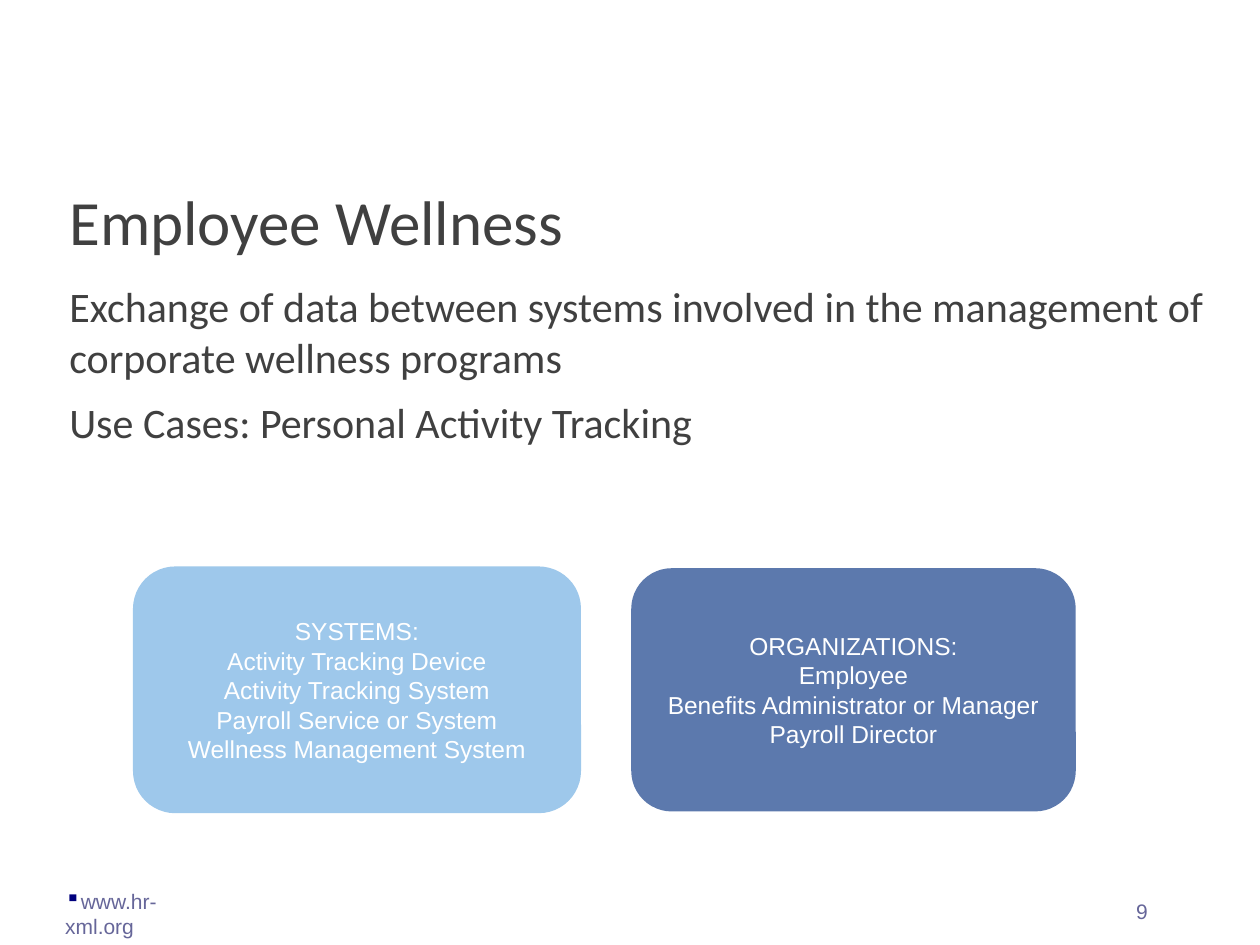
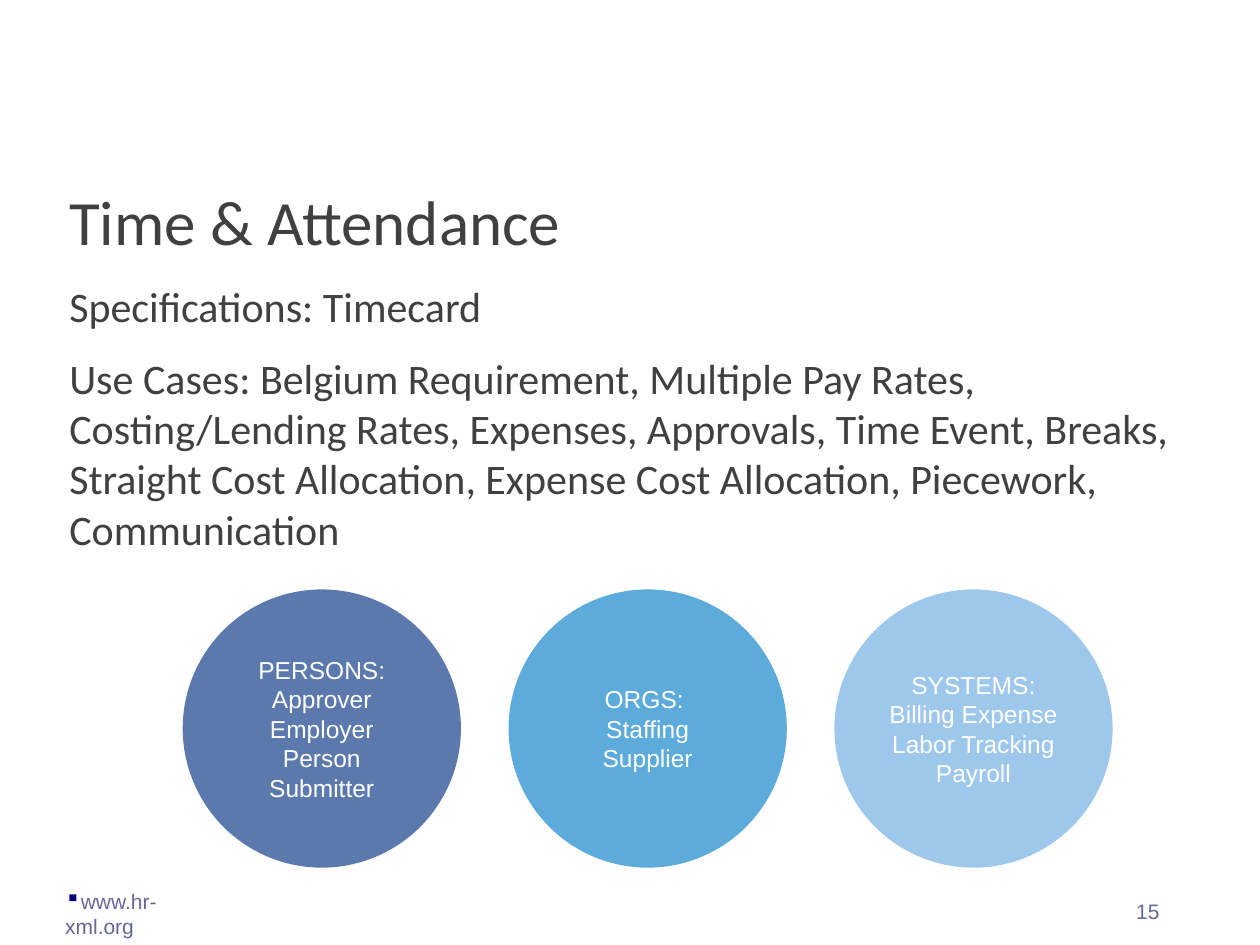
from dataclasses import dataclass

from lxml.etree import SubElement
from pptx import Presentation
from pptx.dml.color import RGBColor as Rgb
from pptx.enum.shapes import MSO_SHAPE as Shape
from pptx.enum.text import MSO_ANCHOR as Anchor, MSO_AUTO_SIZE as Fit, PP_ALIGN as Align
from pptx.oxml.ns import qn
from pptx.util import Pt


@dataclass(frozen=True)
class Theme:
    ink: str = "404040"
    note: str = "666699"
    mark: str = "00007D"
    white: str = "FFFFFF"
    sky: str = "9EC8EB"
    blue: str = "5CABDA"
    slate: str = "5C79AD"
    head: str = "Calibri"
    text: str = "Arial"
    title: int = 36
    body: int = 24
    label: int = 14
    foot: int = 12


T = Theme()
SITE = "www.hr-xml.org"

SLIDES = [
    {
        "title": "Employee Wellness",
        "body": [
            "Exchange of data between systems involved in the management of "
            "corporate wellness programs",
            "Use Cases: Personal Activity Tracking",
        ],
        "page": "9",
        "width": 678,
        "gap": 8.6,
        "row": {"kind": Shape.ROUNDED_RECTANGLE, "left": 77, "top": 324.7,
                "step": 283.7, "size": (254, 139)},
        "parts": [
            (T.sky, T.sky, ["SYSTEMS:", "Activity Tracking Device", "Activity Tracking System",
                            "Payroll Service or System", "Wellness Management System"]),
            (T.slate, None, ["ORGANIZATIONS:", "Employee",
                             "Benefits Administrator or Manager", "Payroll Director"]),
        ],
    },
    {
        "title": "Time & Attendance",
        "body": [
            "Specifications: Timecard",
            "Use Cases: Belgium Requirement, Multiple Pay Rates, Costing/Lending Rates, "
            "Expenses, Approvals, Time Event, Breaks, Straight Cost Allocation, "
            "Expense Cost Allocation, Piecework, Communication",
        ],
        "page": "15",
        "width": 664.6,
        "gap": 12,
        "row": {"kind": Shape.OVAL, "left": 104.4, "top": 336.8,
                "step": 186.2, "size": (159, 159)},
        "parts": [
            (T.slate, None, ["PERSONS: Approver Employer Person Submitter"]),
            (T.blue, None, ["ORGS: ", "Staffing Supplier"]),
            (T.sky, None, ["SYSTEMS: Billing Expense", "Labor Tracking Payroll"]),
        ],
    },
]


def style(para, face, size, color, align=Align.LEFT):
    para.alignment = align
    para.font.name = face
    para.font.size = Pt(size)
    para.font.color.rgb = Rgb.from_string(color)


def flush(para):
    """Drop the bullet and indent that the template gives."""
    props = para._p.get_or_add_pPr()
    props.set("marL", "0")
    props.set("indent", "0")
    SubElement(props, qn("a:buNone"))


def square(para):
    """Put a small coloured square before the paragraph."""
    props = para._p.get_or_add_pPr()
    tint = SubElement(props, qn("a:buClr"))
    SubElement(tint, qn("a:srgbClr"), val=T.mark)
    SubElement(props, qn("a:buChar"), char="▪")


def fill_text(holder, box, lines, size, gap=0):
    holder.left, holder.top, holder.width, holder.height = map(Pt, box)
    frame = holder.text_frame
    frame.text = "\n".join(lines)
    frame.auto_size = Fit.NONE
    frame.word_wrap = True
    frame.vertical_anchor = Anchor.TOP
    frame.margin_left = frame.margin_right = Pt(7.2)
    frame.margin_top = frame.margin_bottom = Pt(7.2)
    for i, para in enumerate(frame.paragraphs):
        flush(para)
        para.space_before = Pt(gap if i else 0)
        para.space_after = Pt(0)
        style(para, T.head, size, T.ink)


def add_note(slide, text, left, top, width, bullet=False):
    frame = slide.shapes.add_textbox(Pt(left), Pt(top), Pt(width), Pt(21.6)).text_frame
    frame.word_wrap = True
    frame.text = text
    para = frame.paragraphs[0]
    if bullet:
        square(para)
    style(para, T.text, T.foot, T.note)


def add_row(slide, row, parts):
    for i, (color, edge, lines) in enumerate(parts):
        left = row["left"] + i * row["step"]
        part = slide.shapes.add_shape(row["kind"], Pt(left), Pt(row["top"]),
                                      *map(Pt, row["size"]))
        part.shadow.inherit = False
        part.fill.solid()
        part.fill.fore_color.rgb = Rgb.from_string(color)
        if edge:
            part.line.color.rgb = Rgb.from_string(edge)
            part.line.width = Pt(2)
        else:
            part.line.fill.background()
        frame = part.text_frame
        frame.word_wrap = True
        frame.vertical_anchor = Anchor.MIDDLE
        frame.text = "\n".join(lines)
        for para in frame.paragraphs:
            style(para, T.text, T.label, T.white, Align.CENTER)


def add_slide(deck, item):
    slide = deck.slides.add_slide(deck.slide_layouts[1])
    width = item["width"]
    fill_text(slide.shapes.title, (32.4, 97.2, width, 56), [item["title"]], T.title)
    fill_text(slide.placeholders[1], (32.4, 153.2, width, 170),
              item["body"], T.body, item["gap"])
    add_row(slide, item["row"], item["parts"])
    add_note(slide, SITE, 30.2, 504, 103, bullet=True)
    add_note(slide, item["page"], 642.2, 509.8, 48.2)


def main():
    deck = Presentation()
    deck.slide_width, deck.slide_height = Pt(720), Pt(540)
    for item in SLIDES:
        add_slide(deck, item)
    deck.save("out.pptx")


if __name__ == "__main__":
    main()
